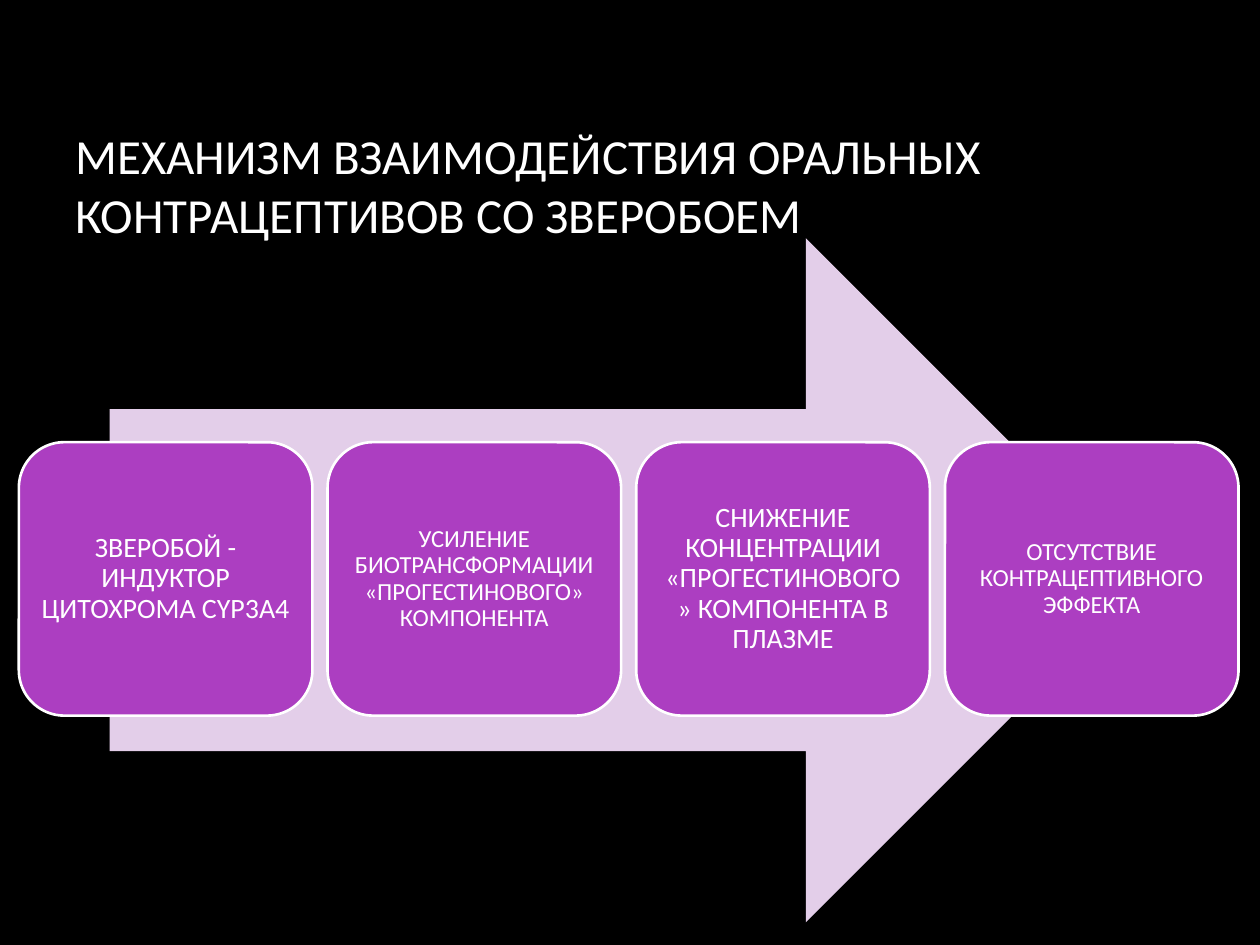
from pptx import Presentation
from pptx import util as u
from pptx.dml.color import RGBColor
from pptx.enum import shapes, text

TITLE = "МЕХАНИЗМ ВЗАИМОДЕЙСТВИЯ ОРАЛЬНЫХ КОНТРАЦЕПТИВОВ СО ЗВЕРОБОЕМ"
STEPS = [
    ("ЗВЕРОБОЙ - ИНДУКТОР ЦИТОХРОМА CYP3A4", 16, 0.07),
    ("УСИЛЕНИЕ БИОТРАНСФОРМАЦИИ «ПРОГЕСТИНОВОГО» КОМПОНЕНТА", 14, 0.06),
    ("СНИЖЕНИЕ КОНЦЕНТРАЦИИ «ПРОГЕСТИНОВОГО» КОМПОНЕНТА В ПЛАЗМЕ", 16, 0.07),
    ("ОТСУТСТВИЕ КОНТРАЦЕПТИВНОГО ЭФФЕКТА", 14, 0.06),
]
LEFT, TOP, WIDTH, HEIGHT, PITCH = 0.15, 3.51, 2.33, 2.17, 2.45
BLACK, WHITE, PALE, PURPLE = "000000", "FFFFFF", "E3CEE9", "AC3EC1"


def paint(fill, color):
    fill.solid()
    fill.fore_color.rgb = RGBColor.from_string(color)


def write(frame, words, size, align):
    frame.text = words
    frame.word_wrap = True
    frame.vertical_anchor = text.MSO_ANCHOR.MIDDLE
    para = frame.paragraphs[0]
    para.alignment = align
    para.font.name = "Calibri"
    para.font.size = u.Pt(size)
    paint(para.font.fill, WHITE)
    return para


def draw(slide, kind, box, color):
    shape = slide.shapes.add_shape(kind, *map(u.Inches, box))
    shape.shadow.inherit = False
    paint(shape.fill, color)
    shape.line.fill.background()
    return shape


def add_step(slide, index, words, size, inset):
    box = (LEFT + index * PITCH, TOP, WIDTH, HEIGHT)
    step = draw(slide, shapes.MSO_SHAPE.ROUNDED_RECTANGLE, box, PURPLE)
    paint(step.line.fill, WHITE)
    step.line.width = u.Pt(1.5)
    frame = step.text_frame
    frame.margin_left = frame.margin_right = u.Inches(inset)
    frame.margin_top = frame.margin_bottom = u.Inches(inset)
    write(frame, words, size, text.PP_ALIGN.CENTER).line_spacing = 0.9


def main():
    """Build the slide on how St John's wort acts on oral contraceptives."""
    deck = Presentation()
    deck.slide_width, deck.slide_height = u.Inches(10), u.Inches(7.5)
    slide = deck.slides.add_slide(deck.slide_layouts[5])
    paint(slide.background.fill, BLACK)

    title = slide.shapes.title
    title.left, title.top = u.Inches(0.5), u.Inches(0.67)
    title.width, title.height = u.Inches(8.5), u.Inches(1.59)
    write(title.text_frame, TITLE, 28, text.PP_ALIGN.LEFT)

    draw(slide, shapes.MSO_SHAPE.RIGHT_ARROW, (0.87, 1.89, 8.24, 5.43), PALE)
    for index, step in enumerate(STEPS):
        add_step(slide, index, *step)
    deck.save("out.pptx")


if __name__ == "__main__":
    main()
